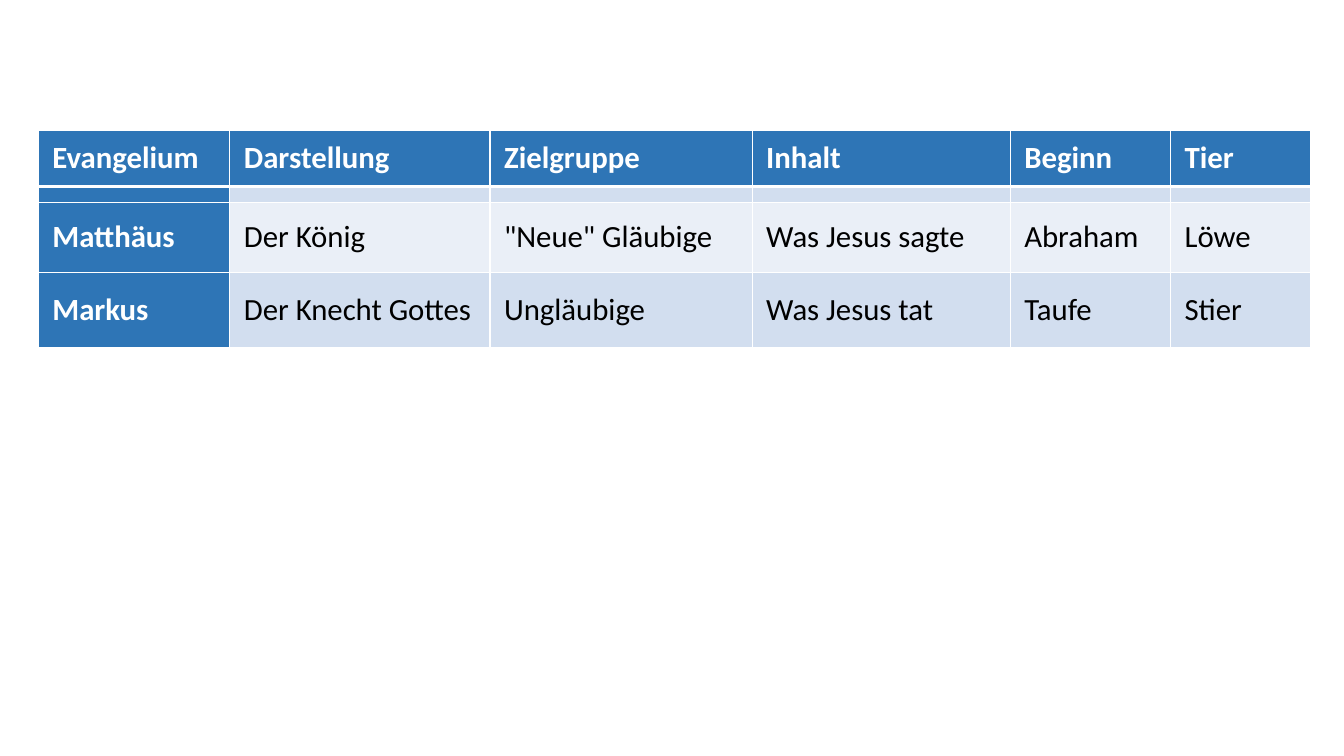
import pptx
import pptx.dml.color
import pptx.enum.text
import pptx.oxml.ns
import pptx.util
import lxml.etree

Inches = pptx.util.Inches
RGB = pptx.dml.color.RGBColor.from_string
qn = pptx.oxml.ns.qn
ALIGN = pptx.enum.text.PP_ALIGN

COLORS = {"head": "2E75B6", "dark": "D2DEEF", "light": "EAEFF7",
          "white": "FFFFFF", "black": "000000"}

rows = [
    ["Evangelium", "Darstellung", "Zielgruppe", "Inhalt", "Beginn", "Tier"],
    [""] * 6,
    ["Matthäus", "Der König", '"Neue" Gläubige', "Was Jesus sagte", "Abraham", "Löwe"],
    ["Markus", "Der Knecht Gottes", "Ungläubige", "Was Jesus tat", "Taufe", "Stier"],
]
widths = [1.9, 2.58, 2.6, 2.56, 1.59, 1.39]
heights = [0.56, 0.16, 0.69, 0.75]


def border(cell, side, width):
    props = cell._tc.get_or_add_tcPr()
    line = lxml.etree.SubElement(props, qn("a:" + side), w=str(pptx.util.Pt(width)))
    fill = lxml.etree.SubElement(line, qn("a:solidFill"))
    lxml.etree.SubElement(fill, qn("a:srgbClr"), val=COLORS["white"])


# Slide
deck = pptx.Presentation()
deck.slide_width = Inches(13.33)
deck.slide_height = Inches(7.5)
slide = deck.slides.add_slide(deck.slide_layouts[6])

# Table grid
table = slide.shapes.add_table(
    len(rows), len(widths), Inches(0.38), Inches(1.29),
    Inches(sum(widths)), Inches(sum(heights))).table
table.first_col = True
for col, width in zip(table.columns, widths):
    col.width = Inches(width)
for row, height in zip(table.rows, heights):
    row.height = Inches(height)

# Cells
for r, texts in enumerate(rows):
    for c, text in enumerate(texts):
        cell = table.cell(r, c)
        head = r == 0 or c == 0

        # Borders: a thick rule lies between header and body
        border(cell, "lnL", 1)
        border(cell, "lnR", 1)
        border(cell, "lnT", 3 if r == 1 else 1)
        border(cell, "lnB", 3 if r == 0 else 1)

        # Fill: bands alternate below the header
        band = "dark" if r % 2 else "light"
        cell.fill.solid()
        cell.fill.fore_color.rgb = RGB(COLORS["head" if head else band])

        # Text
        cell.margin_left = cell.margin_right = Inches(0.14)
        cell.margin_top = cell.margin_bottom = 0
        cell.vertical_anchor = pptx.enum.text.MSO_ANCHOR.MIDDLE
        para = cell.text_frame.paragraphs[0]
        if not text:
            # Small type keeps the spacer row low
            lxml.etree.SubElement(para._p, qn("a:endParaRPr"), sz="600")
            continue
        para.text = text
        para.alignment = ALIGN.JUSTIFY if r == 0 else ALIGN.LEFT
        font = para.runs[0].font
        font.name = "Calibri"
        font.size = pptx.util.Pt(22)
        font.bold = head
        font.color.rgb = RGB(COLORS["white" if head else "black"])

deck.save("out.pptx")
